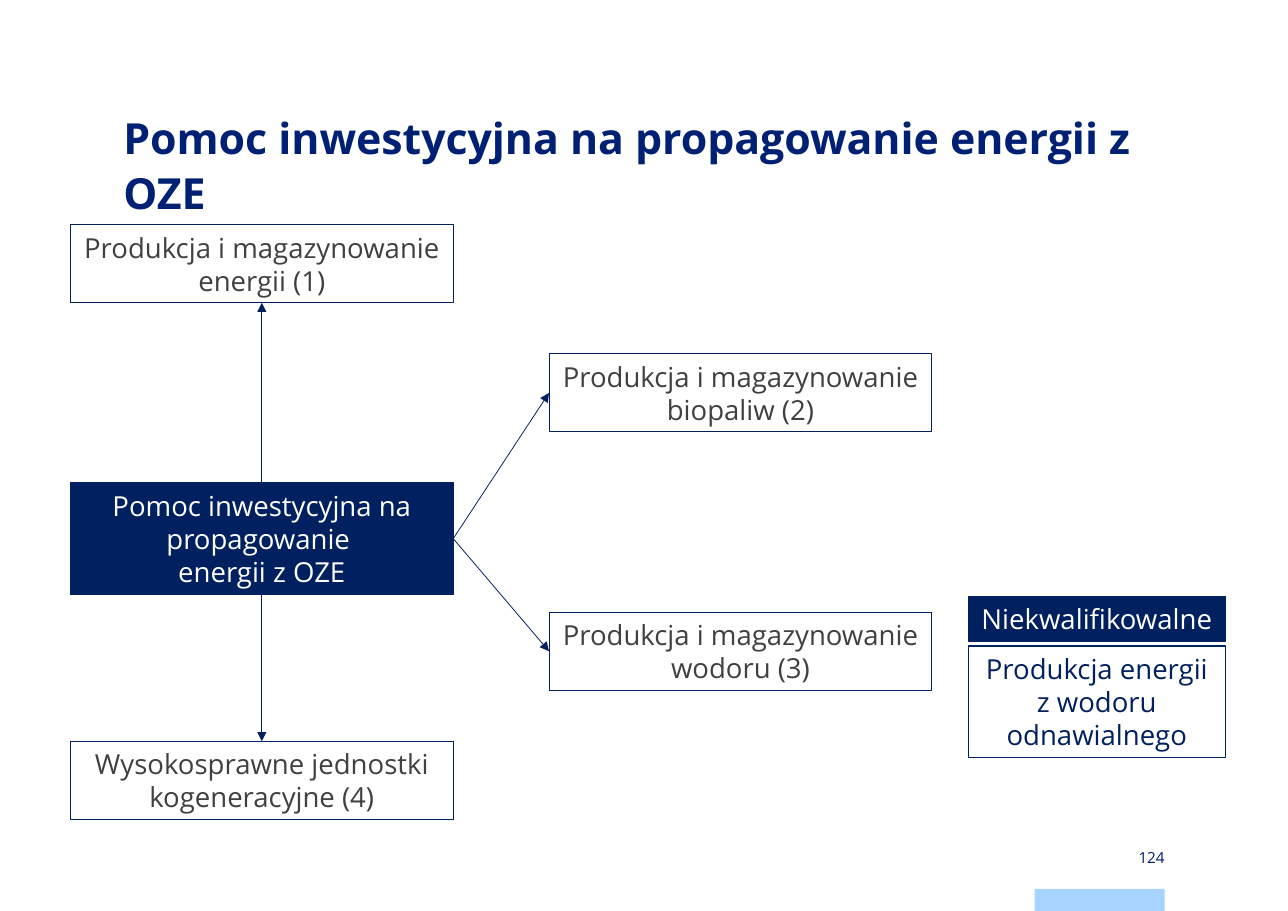
"""Build the slide on investment aid for promoting renewable energy."""
from dataclasses import dataclass

from lxml import etree
from pptx import Presentation
from pptx.dml.color import RGBColor
from pptx.enum import shapes, text
from pptx.oxml import ns
from pptx.util import Pt


@dataclass(frozen=True)
class Theme:
    """Hold the colours, font and type sizes of the slide."""
    font: str = "Open Sans"
    navy: str = "002060"
    heading: str = "002073"
    body: str = "404040"
    white: str = "FFFFFF"
    accent: str = "A6D3FF"
    title_size: float = 28
    box_size: float = 18
    number_size: float = 10


THEME = Theme()
TOP, LEFT, BOTTOM, RIGHT = range(4)


def style(paragraph, size, colour, align, bold=False):
    """Format a whole paragraph."""
    paragraph.alignment = align
    font = paragraph.font
    font.name, font.size, font.bold = THEME.font, Pt(size), bold
    font.color.rgb = RGBColor.from_string(colour)


def place(item, left, top, width, height):
    """Move and size an item, given in points."""
    item.left, item.top = Pt(left), Pt(top)
    item.width, item.height = Pt(width), Pt(height)


def set_margins(frame, horizontal, vertical):
    """Set the inner margins of a text frame."""
    frame.margin_left = frame.margin_right = Pt(horizontal)
    frame.margin_top = frame.margin_bottom = Pt(vertical)


def add_rect(slide, left, top, width, height, fill=None, line=None):
    """Add a flat rectangle."""
    rect = slide.shapes.add_shape(shapes.MSO_SHAPE.RECTANGLE,
                                  Pt(left), Pt(top), Pt(width), Pt(height))
    rect.shadow.inherit = False
    if fill:
        rect.fill.solid()
        rect.fill.fore_color.rgb = RGBColor.from_string(fill)
    else:
        rect.fill.background()
    if line:
        rect.line.color.rgb = RGBColor.from_string(line)
        rect.line.width = Pt(0.75)
    else:
        rect.line.fill.background()
    return rect


def add_box(slide, lines, left, top, width, height, colour, fill=None):
    """Add an outlined box with centred text."""
    box = add_rect(slide, left, top, width, height, fill, THEME.navy)
    frame = box.text_frame
    frame.word_wrap = True
    frame.auto_size = text.MSO_AUTO_SIZE.SHAPE_TO_FIT_TEXT
    paragraph = frame.paragraphs[0]
    for index, line in enumerate(lines):
        if index:
            paragraph.add_line_break()
        paragraph.add_run().text = line
    style(paragraph, THEME.box_size, colour, text.PP_ALIGN.CENTER)
    return box


def add_arrow(slide, source, source_side, target, target_side):
    """Connect two boxes with an arrow."""
    arrow = slide.shapes.add_connector(shapes.MSO_CONNECTOR.STRAIGHT, 0, 0, 0, 0)
    arrow.begin_connect(source, source_side)
    arrow.end_connect(target, target_side)
    arrow.line.color.rgb = RGBColor.from_string(THEME.navy)
    arrow.line.width = Pt(0.5)
    etree.SubElement(arrow.line._get_or_add_ln(), ns.qn("a:tailEnd"), type="triangle")
    etree.SubElement(arrow._element.spPr, ns.qn("a:effectLst"))


def add_title(slide, wording):
    """Fill and place the title placeholder."""
    title = slide.shapes.title
    place(title, 80.6, 70.6, 680.4, 85)
    frame = title.text_frame
    frame.text = wording
    frame.word_wrap = True
    frame.auto_size = text.MSO_AUTO_SIZE.NONE
    frame.vertical_anchor = text.MSO_ANCHOR.TOP
    set_margins(frame, 0, 0)
    paragraph = frame.paragraphs[0]
    paragraph.line_spacing = Pt(36)
    style(paragraph, THEME.title_size, THEME.heading, text.PP_ALIGN.LEFT, True)


def add_page_number(slide, number):
    """Add the page number above the footer bar."""
    add_rect(slide, 676.1, 581, 85, 14.4, THEME.accent)
    label = slide.shapes.add_textbox(Pt(676.1), Pt(553), Pt(85), Pt(14.4))
    frame = label.text_frame
    frame.text = number
    frame.word_wrap = True
    frame.vertical_anchor = text.MSO_ANCHOR.MIDDLE
    set_margins(frame, 0, 5.8)
    style(frame.paragraphs[0], THEME.number_size, THEME.heading, text.PP_ALIGN.RIGHT)


def add_diagram(slide):
    """Add the aid box and the four activities it leads to."""
    first_column, second_column, width = 46, 358.8, 250.2
    rows = [146.9 + 84.4 * row for row in range(5)]
    hub = add_box(slide, ["Pomoc inwestycyjna na propagowanie ", "energii z OZE"],
                  first_column, rows[2], width, 72.7, THEME.white, THEME.navy)
    activities = [
        ("Produkcja i magazynowanie energii (1)", first_column, 0, TOP, BOTTOM),
        ("Produkcja i magazynowanie biopaliw (2)", second_column, 1, RIGHT, LEFT),
        ("Produkcja i magazynowanie wodoru (3)", second_column, 3, RIGHT, LEFT),
        ("Wysokosprawne jednostki kogeneracyjne (4)", first_column, 4, BOTTOM, TOP),
    ]
    for wording, left, row, hub_side, side in activities:
        activity = add_box(slide, [wording], left, rows[row], width, 51, THEME.body)
        add_arrow(slide, hub, hub_side, activity, side)


def add_exclusion(slide):
    """Add the ineligible activity under its heading."""
    left, width = 632.9, 167.8
    add_box(slide, ["Niekwalifikowalne"], left, 390, width, 29,
            THEME.white, THEME.navy)
    add_box(slide, ["Produkcja energii z wodoru odnawialnego"],
            left, 422.2, width, 72.7, THEME.navy)


def main():
    """Build and save the presentation."""
    deck = Presentation()
    deck.slide_width, deck.slide_height = Pt(841.7), Pt(595.4)
    slide = deck.slides.add_slide(deck.slide_layouts.get_by_name("Title Only"))
    add_title(slide, "Pomoc inwestycyjna na propagowanie energii z OZE")
    add_diagram(slide)
    add_exclusion(slide)
    add_page_number(slide, "124")
    deck.save("out.pptx")


if __name__ == "__main__":
    main()
